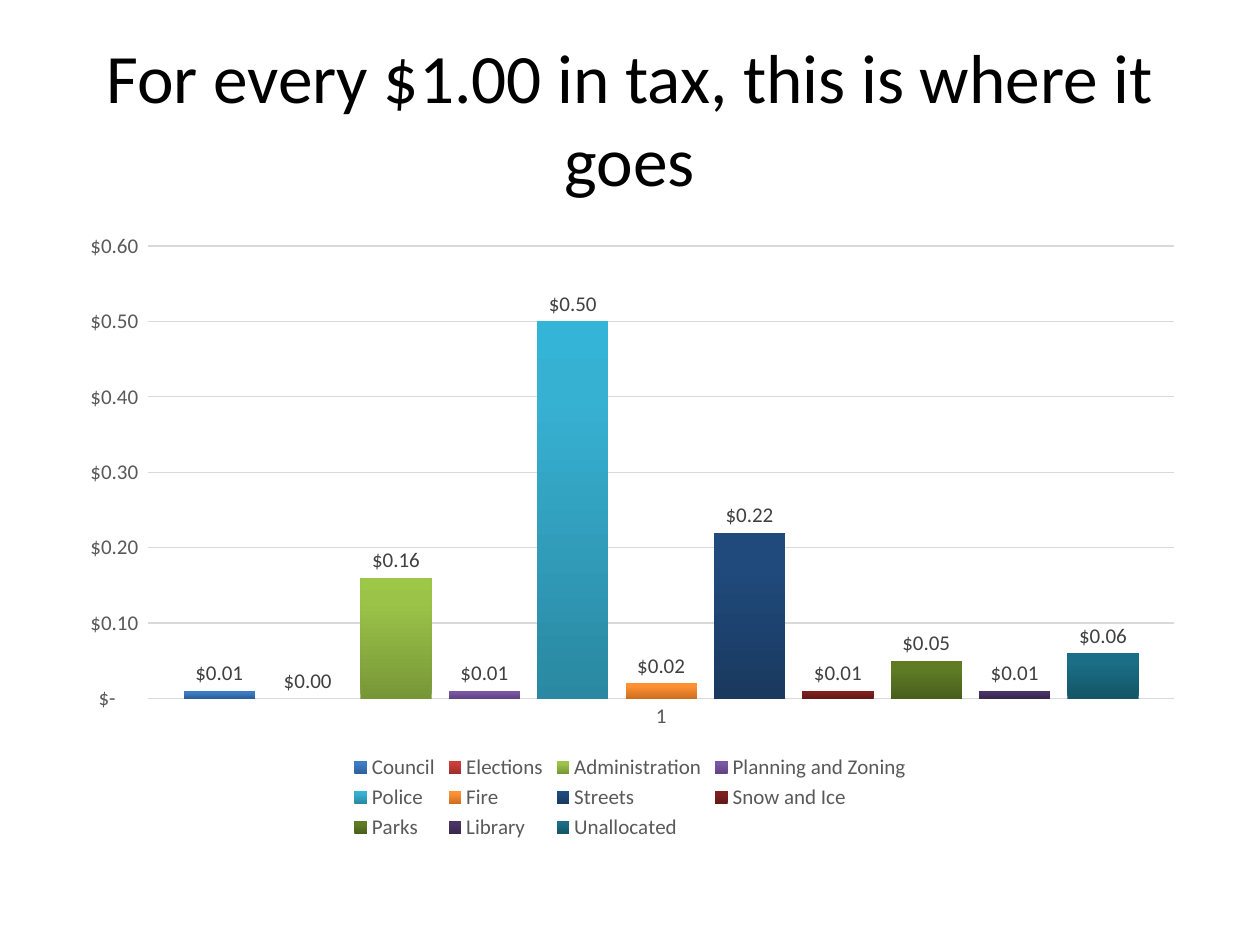
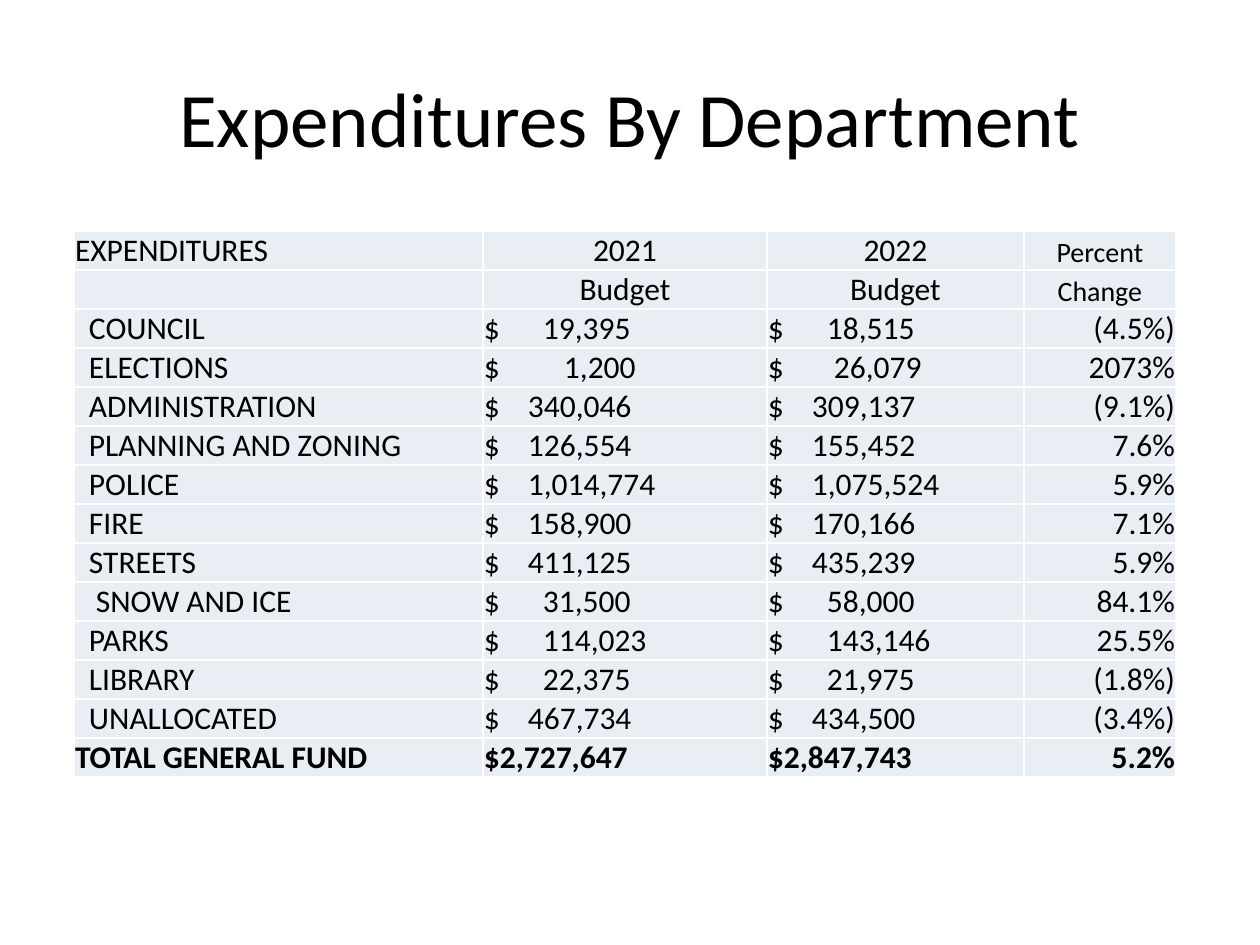
from dataclasses import dataclass
from typing import NamedTuple

from lxml.etree import SubElement
from pptx import Presentation
from pptx.chart.data import CategoryChartData as ChartData
from pptx.dml.color import RGBColor
from pptx.enum.chart import XL_CHART_TYPE as ChartType
from pptx.enum.chart import XL_LABEL_POSITION as LabelPosition
from pptx.enum.chart import XL_LEGEND_POSITION as LegendPosition
from pptx.enum.chart import XL_TICK_MARK as TickMark
from pptx.enum.text import MSO_ANCHOR as Anchor
from pptx.enum.text import PP_ALIGN as Align
from pptx.oxml import parse_xml
from pptx.oxml.ns import nsdecls, qn
from pptx.util import Emu, Pt

EMU_PER_PX = 914400 / 126
FONT = "Calibri"
COLORS = {
    "text": "000000",
    "axis": "595959",
    "label": "404040",
    "grid": "D9D9D9",
    "cell": "E9EDF4",
    "border": "FFFFFF",
}
AXIS_FORMAT = '_("$"* #,##0.00_);_("$"* \\(#,##0.00\\);_("$"* "-"??_);_(@_)'
LABEL_FORMAT = '"$"#,##0.00'


class Area(NamedTuple):
    """A rectangle in px."""

    left: int
    top: int
    width: int
    height: int


TITLE_AREA = Area(63, 38, 1134, 158)
CHART_AREA = Area(63, 221, 1134, 624)
TABLE_LEFT, TABLE_TOP, ROW_HEIGHT = 74, 231, 39
COLUMN_WIDTHS = (409, 284, 257, 152)


class Share(NamedTuple):
    """The part of one tax dollar that a department gets."""

    name: str
    value: float
    bottom: str
    middle: str
    top: str


SHARES = (
    Share("Council", 0.01, "2F5F99", "3D7CC7", "3A7CCB"),
    Share("Elections", 0, "9C2F2D", "CB3E3A", "CE3B37"),
    Share("Administration", 0.16, "779737", "9BC348", "9DC746"),
    Share("Planning and Zoning", 0.01, "5F4480", "7B58A6", "7C57A8"),
    Share("Police", 0.5, "2A88A2", "37B1D2", "34B4D6"),
    Share("Fire", 0.02, "CC6E20", "FF9034", "FF9136"),
    Share("Streets", 0.22, "19395F", "204A7C", "1E4A7E"),
    Share("Snow and Ice", 0.01, "621917", "7F201E", "811F1C"),
    Share("Parks", 0.05, "495F1C", "5F7C25", "607E23"),
    Share("Library", 0.01, "39284E", "4A3365", "4A3366"),
    Share("Unallocated", 0.06, "145566", "1A6E85", "187088"),
)


@dataclass(frozen=True)
class Department:
    """One budget row, with the px where its two amounts start."""

    name: str
    budget_2021: str
    budget_2022: str
    change: str
    tabs: tuple[int, int] = (44, 44)
    indent: int = 14


DEPARTMENTS = (
    Department("COUNCIL", "19,395", "18,515", "(4.5%)", (59, 59)),
    Department("ELECTIONS", "1,200", "26,079", "2073%", (80, 66)),
    Department("ADMINISTRATION", "340,046", "309,137", "(9.1%)"),
    Department("PLANNING AND ZONING", "126,554", "155,452", "7.6%"),
    Department("POLICE", "1,014,774", "1,075,524", "5.9%"),
    Department("FIRE", "158,900", "170,166", "7.1%"),
    Department("STREETS", "411,125", "435,239", "5.9%"),
    Department("SNOW AND ICE", "31,500", "58,000", "84.1%", (59, 59), 21),
    Department("PARKS", "114,023", "143,146", "25.5%", (59, 59)),
    Department("LIBRARY", "22,375", "21,975", "(1.8%)", (59, 59)),
    Department("UNALLOCATED", "467,734", "434,500", "(3.4%)"),
)
HEADINGS = (("EXPENDITURES", "2021", "2022", "Percent"), ("", "Budget", "Budget", "Change"))
TOTALS = ("TOTAL GENERAL FUND", "$2,727,647", "$2,847,743", "5.2%")


def px(length: int) -> Emu:
    """Turn px into EMU."""
    return Emu(round(length * EMU_PER_PX))


def style_font(font, size: float, color: str, bold: bool = False) -> None:
    """Set the typeface, size, weight and colour of a font."""
    font.name = FONT
    font.size = Pt(size)
    font.bold = bold
    font.color.rgb = RGBColor.from_string(COLORS[color])


def write_text(frame, text: str, *, size: float = 18, bold: bool = False,
               align=Align.LEFT, indent: int = 0, tab: int = 0) -> None:
    """Write one formatted paragraph into a text frame."""
    para = frame.paragraphs[0]
    para.alignment = align
    properties = para._p.get_or_add_pPr()
    if indent:
        properties.set("marL", str(px(indent)))
    if tab:
        tabs = SubElement(properties, qn("a:tabLst"))
        SubElement(tabs, qn("a:tab"), pos=str(px(tab)), algn="l")
    if text:
        span = para.add_run()
        span.text = text
        style_font(span.font, size, "text", bold)


def add_page(deck, title: str, size: float):
    """Add a blank slide with a centred title."""
    page = deck.slides.add_slide(deck.slide_layouts[6])
    box = page.shapes.add_textbox(*map(px, TITLE_AREA))
    box.text_frame.word_wrap = True
    box.text_frame.vertical_anchor = Anchor.MIDDLE
    write_text(box.text_frame, title, size=size, align=Align.CENTER)
    return page


def fill_bar(series, share: Share) -> None:
    """Give a series its upward gradient."""
    colors = ((0, share.bottom), (80, share.middle), (100, share.top))
    stops = "".join(
        f'<a:gs pos="{place * 1000}"><a:srgbClr val="{color}"/></a:gs>' for place, color in colors
    )
    series._element.get_or_add_spPr().append(parse_xml(
        f'<a:gradFill {nsdecls("a")} rotWithShape="1"><a:gsLst>{stops}</a:gsLst>'
        '<a:lin ang="16200000" scaled="0"/></a:gradFill>'
    ))


def style_axes(chart) -> None:
    """Format both axes and the gridlines."""
    values, categories = chart.value_axis, chart.category_axis
    for axis in (values, categories):
        axis.major_tick_mark = axis.minor_tick_mark = TickMark.NONE
        style_font(axis.tick_labels.font, 12, "axis")
    values.minimum_scale, values.maximum_scale, values.major_unit = 0, 0.6, 0.1
    values.tick_labels.number_format = AXIS_FORMAT
    values.tick_labels.number_format_is_linked = False
    values.format.line.fill.background()
    for line, width in ((values.major_gridlines.format.line, 0.75), (categories.format.line, 1)):
        line.color.rgb = RGBColor.from_string(COLORS["grid"])
        line.width = Pt(width)


def add_share_chart(page) -> None:
    """Draw the column chart of tax shares."""
    data = ChartData()
    data.categories = ["1"]
    for share in SHARES:
        data.add_series(share.name, [share.value])
    chart = page.shapes.add_chart(ChartType.COLUMN_CLUSTERED, *map(px, CHART_AREA), data).chart
    style_font(chart.font, 10, "text")
    chart.has_title = False
    chart.has_legend = True
    chart.legend.position = LegendPosition.BOTTOM
    chart.legend.include_in_layout = False
    style_font(chart.legend.font, 12, "axis")
    style_axes(chart)
    plot = chart.plots[0]
    plot.vary_by_categories = False
    plot.gap_width, plot.overlap = 100, -24
    for series, share in zip(plot.series, SHARES):
        fill_bar(series, share)
        labels = series.data_labels
        labels.show_value = True
        labels.position = LabelPosition.OUTSIDE_END
        labels.number_format = LABEL_FORMAT
        labels.number_format_is_linked = False
        style_font(labels.font, 12, "label")


def fill_cell(cell, text: str, **text_format) -> None:
    """Write a table cell with its fill, insets and borders."""
    cell.margin_left = cell.margin_right = cell.margin_top = px(1)
    cell.margin_bottom = 0
    cell.vertical_anchor = Anchor.BOTTOM
    cell.fill.solid()
    cell.fill.fore_color.rgb = RGBColor.from_string(COLORS["cell"])
    properties = cell._tc.get_or_add_tcPr()
    for place, side in enumerate(("lnL", "lnR", "lnT", "lnB")):
        properties.insert(place, parse_xml(
            f'<a:{side} {nsdecls("a")} w="{Pt(1)}"><a:solidFill>'
            f'<a:srgbClr val="{COLORS["border"]}"/></a:solidFill></a:{side}>'
        ))
    write_text(cell.text_frame, text, **text_format)


def add_budget_table(page) -> None:
    """Draw the table of department budgets."""
    row_count = len(HEADINGS) + len(DEPARTMENTS) + 1
    area = Area(TABLE_LEFT, TABLE_TOP, sum(COLUMN_WIDTHS), ROW_HEIGHT * row_count)
    table = page.shapes.add_table(row_count, len(COLUMN_WIDTHS), *map(px, area)).table
    table.first_row = table.horz_banding = False
    for column, width in zip(table.columns, COLUMN_WIDTHS):
        column.width = px(width)
    for row, texts in enumerate(HEADINGS):
        for column, text in enumerate(texts):
            fill_cell(table.cell(row, column), text, size=16 if column == 3 else 18,
                      align=Align.CENTER if column else Align.LEFT)
    for row, department in enumerate(DEPARTMENTS, len(HEADINGS)):
        fill_cell(table.cell(row, 0), department.name, indent=department.indent)
        amounts = (department.budget_2021, department.budget_2022)
        for column, (amount, tab) in enumerate(zip(amounts, department.tabs), 1):
            fill_cell(table.cell(row, column), f"$\t{amount}", tab=tab)
        fill_cell(table.cell(row, 3), department.change, align=Align.RIGHT)
    for column, text in enumerate(TOTALS):
        fill_cell(table.cell(row_count - 1, column), text, bold=True,
                  align=Align.RIGHT if column == 3 else Align.LEFT)


def main() -> None:
    """Build and save the deck."""
    deck = Presentation()
    deck.slide_width, deck.slide_height = px(1260), px(945)
    add_share_chart(add_page(deck, "For every $1.00 in tax, this is where it goes", 39.6))
    add_budget_table(add_page(deck, "Expenditures By Department", 44))
    deck.save("out.pptx")


if __name__ == "__main__":
    main()
